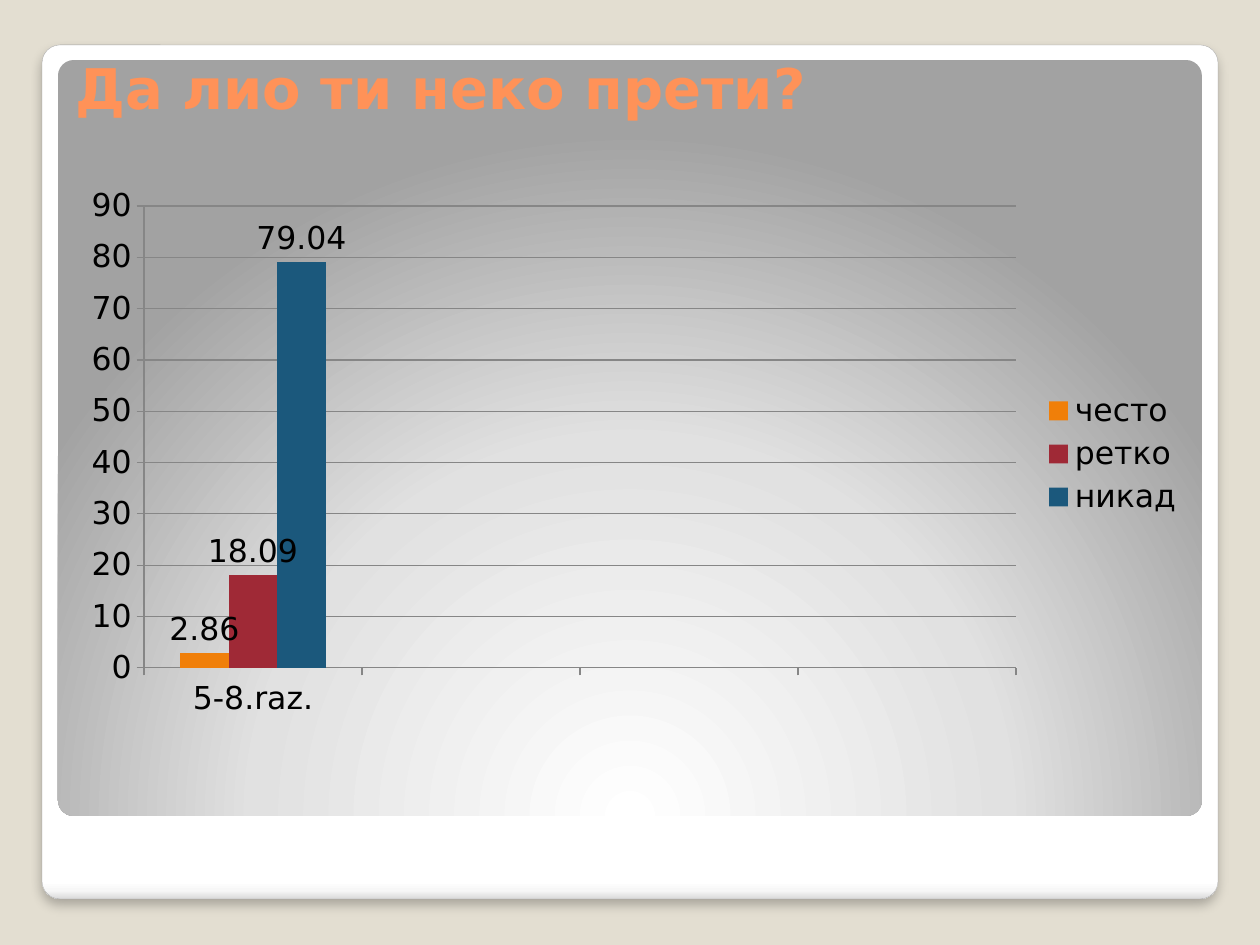
from lxml import etree
from pptx import Presentation
from pptx.chart.data import CategoryChartData
from pptx.dml.color import RGBColor
from pptx.enum.chart import XL_CHART_TYPE, XL_LABEL_POSITION, XL_LEGEND_POSITION, XL_TICK_MARK
from pptx.enum.shapes import MSO_SHAPE
from pptx.enum.text import MSO_ANCHOR
from pptx.oxml import parse_xml
from pptx.oxml.ns import nsdecls, qn
from pptx.util import Pt

SCALE = 914400 / 126
FONT = "DejaVu Sans"


def emu(*px):
    return [round(n * SCALE) for n in px]


def tint(code):
    return RGBColor.from_string(code)


def put(frame, text, size=18, color="000000", bold=False):
    run = frame.paragraphs[0].add_run()
    run.text = text
    font = run.font
    font.name, font.size, font.bold = FONT, Pt(size), bold
    font.color.rgb = tint(color)


class Deck:
    """Holds the style and the current slide, and draws each kind of element."""

    def __init__(self, back):
        self.prs = Presentation()
        self.prs.slide_width, self.prs.slide_height = emu(1260, 945)
        self.slide = self.prs.slides.add_slide(self.prs.slide_layouts[6])
        fill = self.slide.background.fill
        fill.solid()
        fill.fore_color.rgb = tint(back)

    def panel(self, box, stops, path, line=None, shade=False):
        shape = self.slide.shapes.add_shape(MSO_SHAPE.ROUNDED_RECTANGLE, *emu(*box))
        shape.adjustments[0] = 0.021
        shape.shadow.inherit = False
        shape.fill.background()
        marks = "".join(
            f'<a:gs pos="{pos * 1000}"><a:srgbClr val="{code}"/></a:gs>' for pos, code in stops
        )
        props = shape.fill._xPr
        blank = props.find(qn("a:noFill"))
        props.replace(blank, parse_xml(
            f'<a:gradFill {nsdecls("a")} rotWithShape="1"><a:gsLst>{marks}</a:gsLst>{path}</a:gradFill>'
        ))
        if line:
            shape.line.color.rgb = tint(line)
            shape.line.width = Pt(0.16)
        else:
            shape.line.fill.background()
        if shade:
            props.find(qn("a:effectLst")).append(parse_xml(
                f'<a:outerShdw {nsdecls("a")} blurRad="{Pt(6)}" dist="{Pt(4)}" dir="5400000" '
                'rotWithShape="0"><a:srgbClr val="000000"><a:alpha val="25000"/></a:srgbClr></a:outerShdw>'
            ))

    def title(self, box, text, **style):
        frame = self.slide.shapes.add_textbox(*emu(*box)).text_frame
        frame.word_wrap = True
        frame.vertical_anchor = MSO_ANCHOR.BOTTOM
        put(frame, text, **style)

    def chart(self, box, cats, rows, plot):
        data = CategoryChartData()
        data.categories = cats
        for name, vals, _ in rows:
            data.add_series(name, vals)
        kind = XL_CHART_TYPE.COLUMN_CLUSTERED
        chart = self.slide.shapes.add_chart(kind, *emu(*box), data).chart
        chart.has_title = False
        chart.font.name, chart.font.size = FONT, Pt(18)
        chart.font.color.rgb = tint("000000")
        chart.has_legend = True
        chart.legend.position = XL_LEGEND_POSITION.RIGHT
        chart.legend.include_in_layout = False
        bars = chart.plots[0]
        bars.gap_width, bars.overlap, bars.vary_by_categories = 150, 0, False
        for row, (_, _, color) in zip(bars.series, rows):
            row.format.fill.solid()
            row.format.fill.fore_color.rgb = tint(color)
            row.data_labels.show_value = True
            row.data_labels.position = XL_LABEL_POSITION.OUTSIDE_END
        axis = chart.value_axis
        axis.minimum_scale, axis.maximum_scale, axis.major_unit = 0, 90, 10
        axis.has_major_gridlines = True
        for part in (axis, chart.category_axis, axis.major_gridlines):
            part.format.line.color.rgb = tint("868686")
            part.format.line.width = Pt(0.75)
        for part in (axis, chart.category_axis):
            part.major_tick_mark = XL_TICK_MARK.OUTSIDE
        self.place(chart, box, plot)

    def place(self, chart, box, plot):
        area = chart._chartSpace.find(".//" + qn("c:plotArea"))
        for old in area.findall(qn("c:layout")):
            area.remove(old)
        layout = etree.Element(qn("c:layout"))
        manual = etree.SubElement(layout, qn("c:manualLayout"))
        left, top, wide, high = box
        x, y, w, h = plot
        marks = {
            "layoutTarget": "inner", "xMode": "edge", "yMode": "edge",
            "x": (x - left) / wide, "y": (y - top) / high, "w": w / wide, "h": h / high,
        }
        for tag, val in marks.items():
            etree.SubElement(manual, qn(f"c:{tag}")).set("val", str(val))
        area.insert(0, layout)


def main():
    deck = Deck("E3DED1")
    deck.panel(
        (42, 45, 1176, 854),
        [(0, "FFFFFF"), (98, "FFFFFF"), (99, "F7F7F7"), (100, "DADADA")],
        '<a:lin ang="5400000" scaled="0"/>', line="A4A4A4", shade=True,
    )
    deck.panel(
        (58, 60, 1144, 756),
        [(0, "FFFFFF"), (55, "E1E1E1"), (100, "A2A2A2")],
        '<a:path path="circle"><a:fillToRect l="50000" t="175000" r="50000" b="-75000"/></a:path>',
    )
    deck.title((63, 78, 1134, 49), "Да лио ти неко прети?", size=32, color="FF9258", bold=True)
    rows = [("често", 2.86, "F07F09"), ("ретко", 18.09, "9F2936"), ("никад", 79.04, "1B587C")]
    deck.chart(
        (69, 178, 1128, 552),
        ["5-8.raz.", "", "", ""],
        [(name, [val, None, None, None], color) for name, val, color in rows],
        (144, 206, 872, 462),
    )
    deck.prs.save("out.pptx")


if __name__ == "__main__":
    main()
